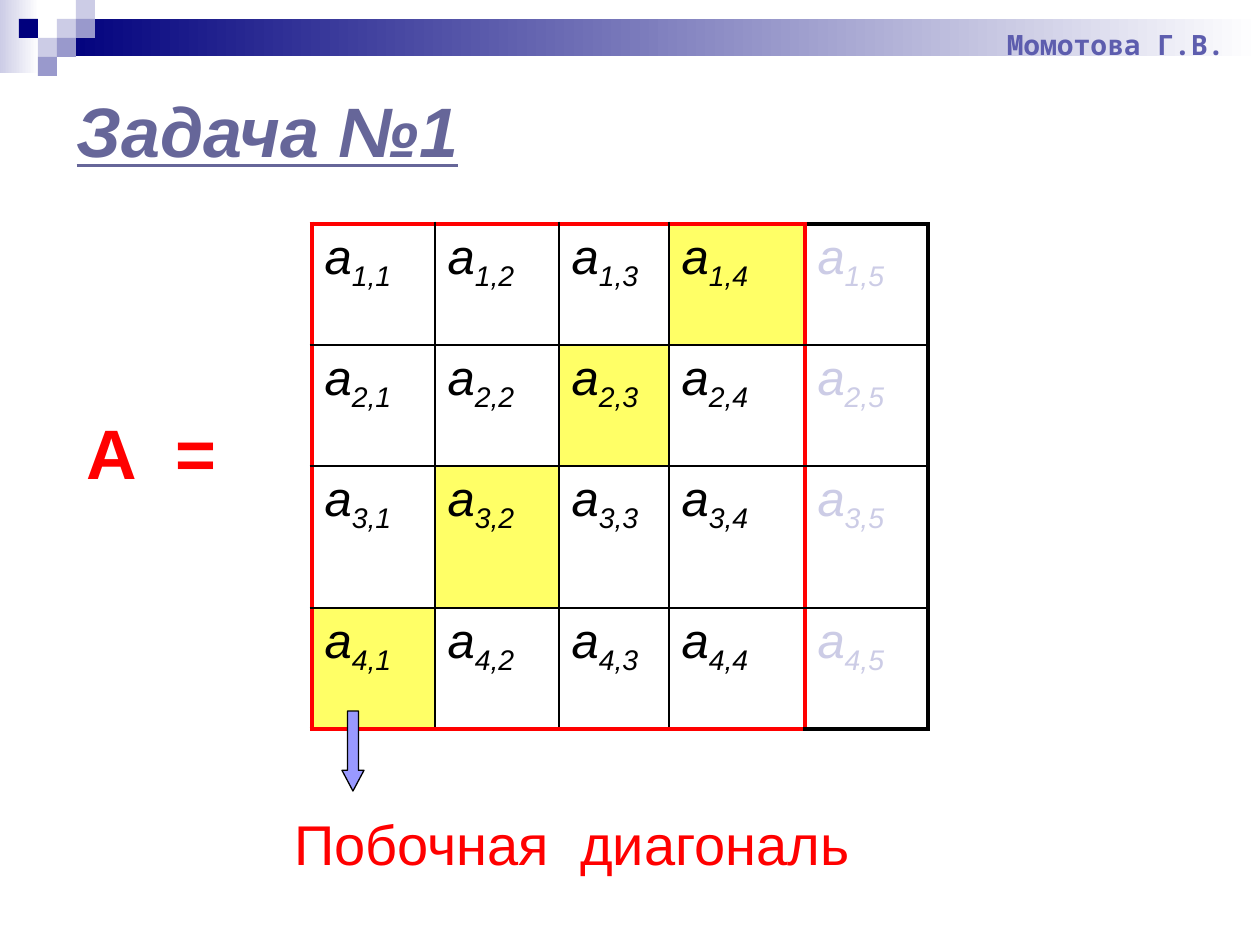
import pptx
import pptx.util
import pptx.dml.color
import pptx.enum.shapes
import pptx.enum.text
import pptx.oxml
import pptx.oxml.ns

RGB = pptx.dml.color.RGBColor
SHAPE = pptx.enum.shapes.MSO_SHAPE
ANCHOR = pptx.enum.text.MSO_ANCHOR
ALIGN = pptx.enum.text.PP_ALIGN

WHITE = RGB(0xFF, 0xFF, 0xFF)
BLACK = RGB(0, 0, 0)
RED = RGB(0xFF, 0, 0)
NAVY = RGB(0, 0, 0x7D)
PALE = RGB(0xCC, 0xCC, 0xE6)
LILAC = RGB(0x99, 0x99, 0xCC)
ARROW = RGB(0x99, 0x99, 0xFF)
YELLOW = RGB(0xFF, 0xFF, 0x66)
TITLE = RGB(0x66, 0x66, 0x99)
AUTHOR = RGB(0x5D, 0x5D, 0xAE)

PX_PER_INCH = 126
SQUARE = 19
COLS = [123, 124, 110, 136, 123]
ROWS = [121, 121, 142, 121]
LETTERS = ["aaaaa", "aaaaa", "aaaaa", "aаааа"]
MINOR = 4


def px(n):
    return pptx.util.Emu(round(n * 914400 / PX_PER_INCH))


def add_run(p, text, size=28, color=BLACK, font="Arial", bold=False,
            italic=False, underline=False, subscript=False):
    r = p.add_run()
    r.text = text
    f = r.font
    f.size, f.name, f.bold, f.italic = pptx.util.Pt(size), font, bold, italic
    f.underline = underline
    f.color.rgb = color
    if subscript:
        r._r.get_or_add_rPr().set("baseline", "-25000")


def add_text(s, x, y, w, h, text, anchor=ANCHOR.TOP, align=ALIGN.LEFT, **fmt):
    tf = s.shapes.add_textbox(px(x), px(y), px(w), px(h)).text_frame
    tf.word_wrap = True
    tf.vertical_anchor = anchor
    tf.paragraphs[0].alignment = align
    add_run(tf.paragraphs[0], text, **fmt)


def add_block(s, x, y, w, h, color, fade_to=None, kind=SHAPE.RECTANGLE):
    sp = s.shapes.add_shape(kind, px(x), px(y), px(w), px(h))
    sp.shadow.inherit = False
    sp.line.fill.background()
    if fade_to is None:
        sp.fill.solid()
        sp.fill.fore_color.rgb = color
    else:
        sp.fill.gradient()
        sp.fill.gradient_angle = 0
        for stop, rgb in zip(sp.fill.gradient_stops, (color, fade_to)):
            stop.color.rgb = rgb
    return sp


def add_banner(s, x, y, w):
    add_block(s, x, y, 39, 73, PALE, fade_to=WHITE)
    add_block(s, x + 3 * SQUARE, y + SQUARE, w - 3 * SQUARE, 37, NAVY, fade_to=WHITE)
    squares = [(3, 1, PALE), (4, 0, PALE), (4, 1, LILAC), (2, 2, PALE),
               (1, 1, NAVY), (3, 2, LILAC), (2, 3, LILAC)]
    for col, row, color in squares:
        add_block(s, x + (col * SQUARE if col == 1 else col * SQUARE),
                  y + row * SQUARE, SQUARE, SQUARE, color)
    add_text(s, x + w - 422, y + 4, 399, 63, "Момотова Г.В.", anchor=ANCHOR.BOTTOM,
             align=ALIGN.RIGHT, size=16, color=AUTHOR, font="Noto Sans Mono", bold=True)


def add_title(s, x, y, w, h):
    sp = s.shapes.title
    sp.left, sp.top, sp.width, sp.height = px(x), px(y), px(w), px(h)
    tf = sp.text_frame
    tf.vertical_anchor = ANCHOR.MIDDLE
    p = tf.paragraphs[0]
    p.alignment = ALIGN.LEFT
    add_run(p, "Задача №1", size=40, color=TITLE, bold=True, italic=True, underline=True)


def set_border(cell, side, color, width):
    cell._tc.get_or_add_tcPr().append(pptx.oxml.parse_xml(
        f'<a:ln{side} {pptx.oxml.ns.nsdecls("a")} w="{pptx.util.Pt(width)}">'
        f'<a:solidFill><a:srgbClr val="{color}"/></a:solidFill></a:ln{side}>'))


def edge(line, last, inside):
    if inside and line in (0, MINOR):
        return RED, 3
    if line in (0, last):
        return BLACK, 2.25
    return BLACK, 1


def add_matrix(s, x, y):
    table = s.shapes.add_table(len(ROWS), len(COLS), px(x), px(y),
                               px(sum(COLS)), px(sum(ROWS))).table
    table.first_row = table.horz_banding = False
    for col, w in zip(table.columns, COLS):
        col.width = px(w)
    for i, h in enumerate(ROWS):
        table.rows[i].height = px(h)
        for j, letter in enumerate(LETTERS[i]):
            cell = table.cell(i, j)
            inside = j < MINOR
            set_border(cell, "L", *edge(j, len(COLS), True))
            set_border(cell, "R", *edge(j + 1, len(COLS), True))
            set_border(cell, "T", *edge(i, len(ROWS), inside))
            set_border(cell, "B", *edge(i + 1, len(ROWS), inside))
            if i + j == MINOR - 1:
                cell.fill.solid()
                cell.fill.fore_color.rgb = YELLOW
            else:
                cell.fill.background()
            p = cell.text_frame.paragraphs[0]
            color = BLACK if inside else PALE
            add_run(p, letter, color=color, italic=True)
            add_run(p, f"{i + 1},{j + 1}", color=color, italic=True, subscript=True)


def add_labels(s, x, y):
    add_text(s, x, y, 268, 97, "А  =", size=40, color=RED, bold=True)
    add_text(s, x + 208, y + 400, 694, 89, "Побочная  диагональ", size=32, color=RED)
    sp = add_block(s, x + 268, y + 308, 22, 80, ARROW, kind=SHAPE.DOWN_ARROW)
    sp.adjustments[0], sp.adjustments[1] = 0.5, 0.94
    sp.line.color.rgb = BLACK
    sp.line.width = pptx.util.Pt(0.75)


def main():
    prs = pptx.Presentation()
    prs.slide_width, prs.slide_height = px(1260), px(945)
    s = prs.slides.add_slide(prs.slide_layouts[5])
    add_banner(s, 0, 0, 1260)
    add_title(s, 64, 83, 1134, 94)
    add_matrix(s, 312, 224)
    add_labels(s, 74, 403)
    prs.save("out.pptx")


if __name__ == "__main__":
    main()
